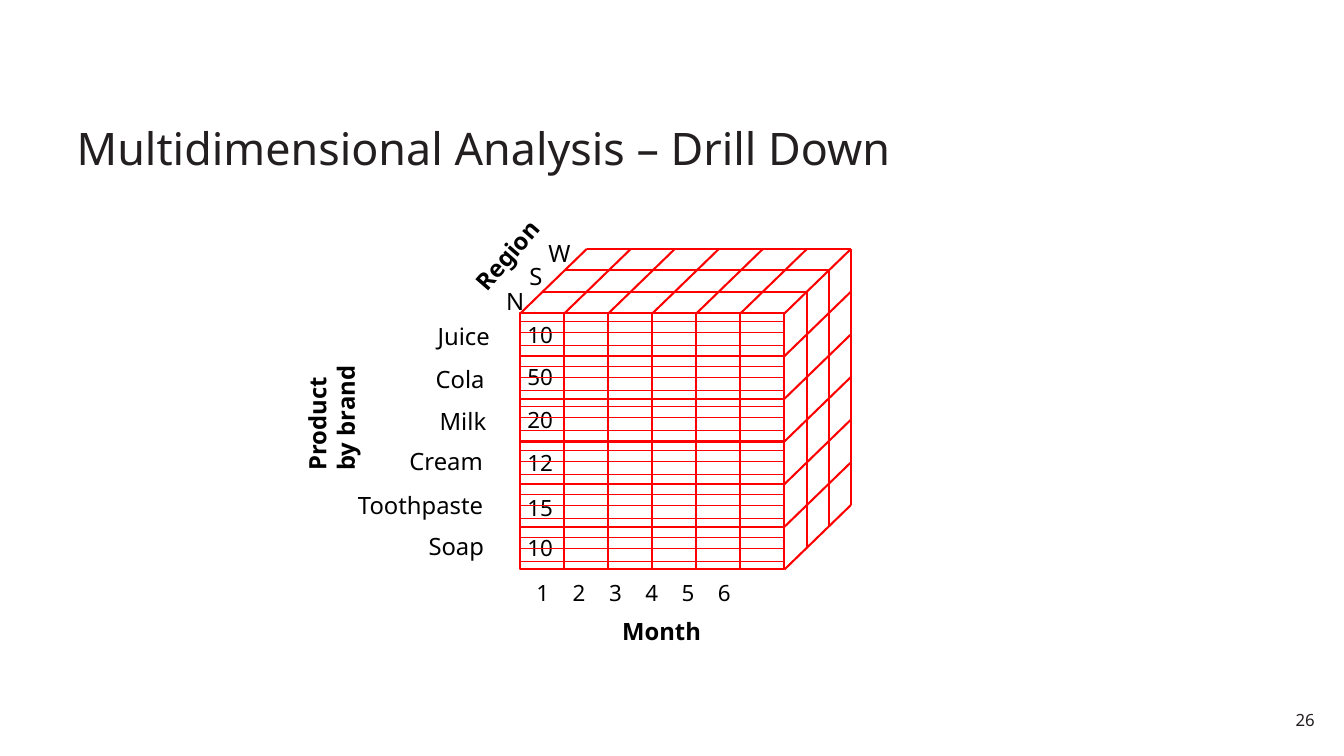
"""Build the drill-down slide with a product, month and region data cube."""
from lxml import etree
from pptx import Presentation
from pptx.dml.color import RGBColor
from pptx.enum.shapes import MSO_CONNECTOR, MSO_SHAPE
from pptx.enum.text import MSO_ANCHOR, MSO_AUTO_SIZE, PP_ALIGN
from pptx.oxml.ns import qn
from pptx.util import Inches, Pt

STRAIGHT = MSO_CONNECTOR.STRAIGHT
RECTANGLE = MSO_SHAPE.RECTANGLE
BOTTOM = MSO_ANCHOR.BOTTOM
NO_AUTOFIT = MSO_AUTO_SIZE.NONE
LEFT, RIGHT = PP_ALIGN.LEFT, PP_ALIGN.RIGHT
RED = RGBColor(0xFF, 0x00, 0x00)
BLACK = RGBColor(0x00, 0x00, 0x00)
INK = RGBColor(0x23, 0x1F, 0x20)
FONT = "Noto Sans"

CUBE_X, CUBE_Y, CUBE_W, CUBE_H = 5.16, 3.11, 2.62, 2.54
COLS, ROWS, LAYERS = 6, 6, 3
COL_W, ROW_H = CUBE_W / COLS, CUBE_H / ROWS
DEPTH_X, DEPTH_Y = 0.66, -0.64
CUBE_R, CUBE_B = CUBE_X + CUBE_W, CUBE_Y + CUBE_H
MONTH_STEP = 0.36

PRODUCTS = [
    ("Juice", 4.34, 3.19, "10", 3.19, 3.19),
    ("Cola", 4.32, 3.62, "50", 3.60, 3.63),
    ("Milk", 4.36, 4.03, "20", 4.03, 4.03),
    ("Cream", 4.06, 4.43, "12", 4.46, 4.47),
    ("Toothpaste", 3.55, 4.87, "15", 4.90, 4.90),
    ("Soap", 4.25, 5.27, "10", 5.30, 5.33),
]
REGIONS = [("N", 5.02, 2.84), ("S", 5.25, 2.60), ("W", 5.44, 2.37)]
AXES = [
    (["Month"], 6.17, 6.12, 1.17, 0),
    (["Region"], 4.58, 2.31, 1.03, 311),
    (["Product", "by brand"], 2.57, 3.96, 1.14, 270),
]

prs = Presentation()
prs.slide_width, prs.slide_height = Inches(13.33), Inches(7.5)
s = prs.slides.add_slide(prs.slide_layouts[5])


def add_line(x1, y1, x2, y2, width=1.48):
    line = s.shapes.add_connector(STRAIGHT, Inches(x1), Inches(y1), Inches(x2), Inches(y2))
    line.line.color.rgb = RED
    line.line.width = Pt(width)
    etree.SubElement(line._element.spPr, qn("a:effectLst"))
    return line


def add_label(lines, x, y, w, size=17, bold=False, color=BLACK, tabs=()):
    box = s.shapes.add_textbox(Inches(x), Inches(y), Inches(w), Inches(0.28))
    tf = box.text_frame
    tf.word_wrap = True
    tf.margin_left = tf.margin_right = tf.margin_top = tf.margin_bottom = 0
    tf.text = "\n".join(lines)
    for p in tf.paragraphs:
        if tabs:
            tab_list = etree.SubElement(p._p.get_or_add_pPr(), qn("a:tabLst"))
            for stop in tabs:
                etree.SubElement(tab_list, qn("a:tab"), pos=str(Inches(stop)), algn="l")
        p.font.name, p.font.size, p.font.bold = FONT, Pt(size), bold
        p.font.color.rgb = color
    return box


title = s.shapes.title
title.left, title.top, title.width, title.height = (Inches(v) for v in (0.68, 0.76, 11.97, 1.02))
tf = title.text_frame
tf.text = "Multidimensional Analysis – Drill Down"
tf.auto_size = NO_AUTOFIT
tf.word_wrap = True
tf.vertical_anchor = BOTTOM
tf.margin_left = tf.margin_right = Inches(0.08)
tf.margin_top = tf.margin_bottom = Inches(0.04)
p = tf.paragraphs[0]
p.alignment = LEFT
p.line_spacing = 0.9
p.font.name, p.font.size = FONT, Pt(32)
p.font.color.rgb = INK

number = add_label(["26"], 12.73, 7.04, 0.31, size=12, color=INK)
number.text_frame.paragraphs[0].alignment = RIGHT

front = s.shapes.add_shape(RECTANGLE, Inches(CUBE_X), Inches(CUBE_Y), Inches(CUBE_W), Inches(CUBE_H))
front.shadow.inherit = False
front.fill.background()
front.line.color.rgb = RED
front.line.width = Pt(1.48)

for row in range(1, ROWS + 1):
    y = CUBE_Y + row * ROW_H
    edge = add_line(CUBE_R, y, CUBE_R + DEPTH_X, y + DEPTH_Y)
    if row < ROWS:
        across = add_line(CUBE_X, y, CUBE_R, y)
    if row == ROWS / 2:
        edge.begin_connect(front, 3)
        across.begin_connect(front, 1)
        across.end_connect(front, 3)

for col in range(COLS + 1):
    x = CUBE_X + col * COL_W
    edge = add_line(x, CUBE_Y, x + DEPTH_X, CUBE_Y + DEPTH_Y)
    if 0 < col < COLS:
        down = add_line(x, CUBE_Y, x, CUBE_B)
    if col == COLS / 2:
        edge.begin_connect(front, 0)
        down.begin_connect(front, 0)
        down.end_connect(front, 2)

for layer in range(1, LAYERS + 1):
    dx, dy = DEPTH_X * layer / LAYERS, DEPTH_Y * layer / LAYERS
    add_line(CUBE_X + dx, CUBE_Y + dy, CUBE_R + dx, CUBE_Y + dy)
    add_line(CUBE_R + dx, CUBE_Y + dy, CUBE_R + dx, CUBE_B + dy)

for name, name_x, name_y, value, value_y, brand_y in PRODUCTS:
    add_label([name], name_x, name_y, 1.32)
    add_label([value], 5.23, value_y, 0.3, size=16)
    for offset in (0, 0.11, 0.24):
        add_line(CUBE_X, brand_y + offset, CUBE_R, brand_y + offset, 0.5)

for region, x, y in REGIONS:
    add_label([region], x, y, 0.27)
for lines, x, y, w, angle in AXES:
    add_label(lines, x, y, w, bold=True).rotation = angle
months = "\t".join(str(m) for m in range(1, COLS + 1))
add_label([months], 5.32, 5.75, 2.41, size=16, tabs=[MONTH_STEP * m for m in range(1, COLS)])

prs.save("out.pptx")
